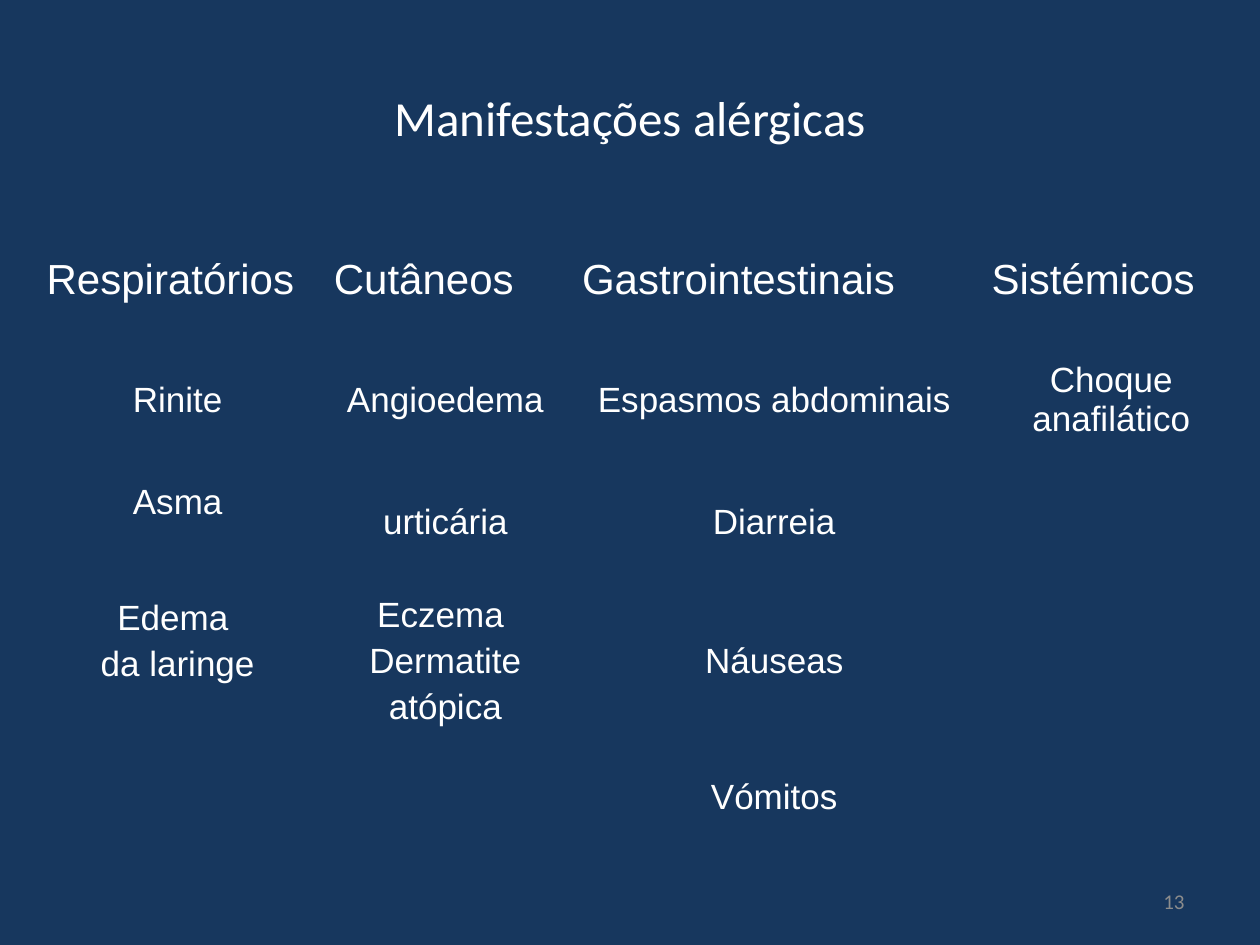
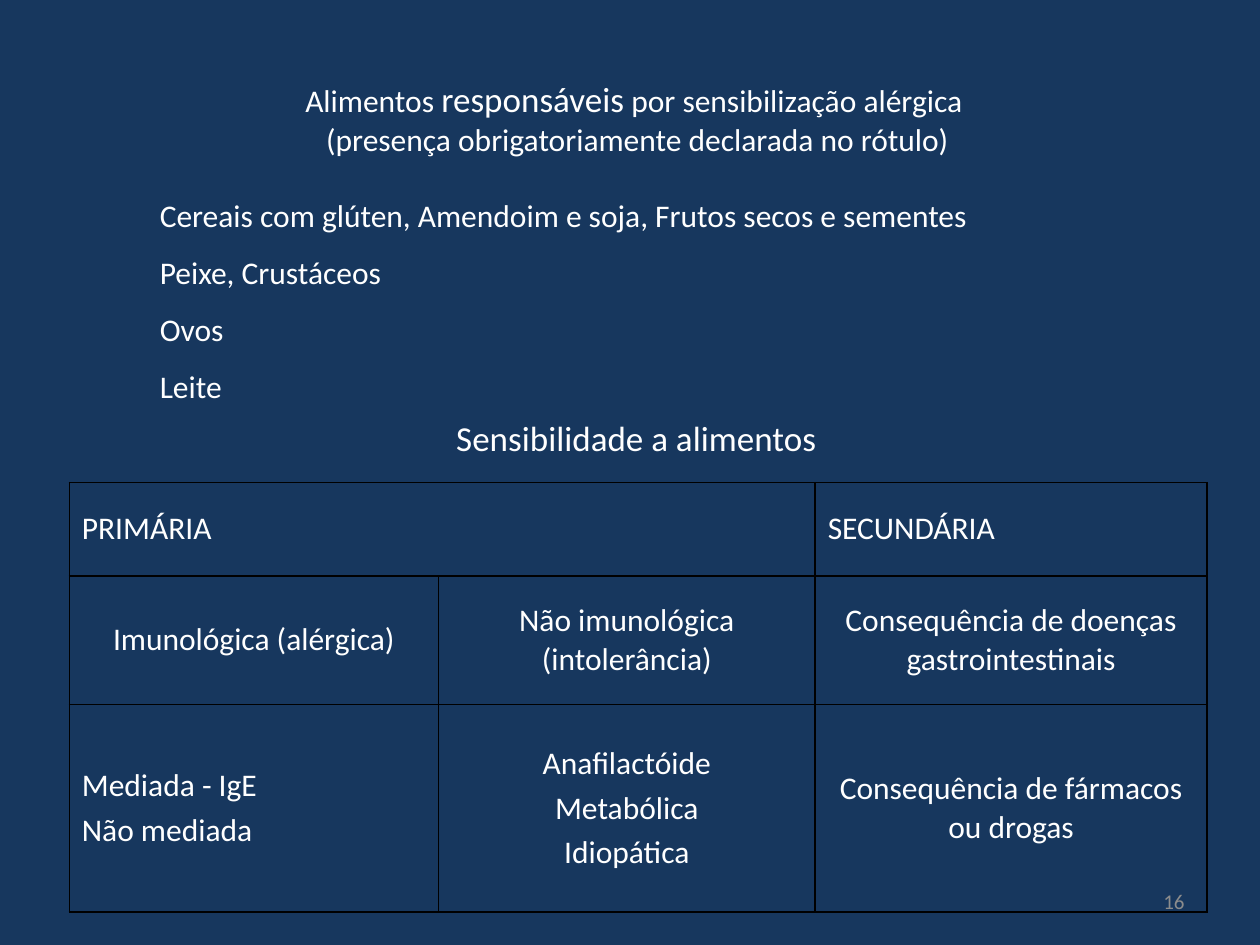
import pptx
import pptx.dml.color
import pptx.enum.text
import pptx.oxml.ns
import pptx.util
from lxml import etree

Inches, Pt = pptx.util.Inches, pptx.util.Pt
ALIGN = pptx.enum.text.PP_ALIGN
MIDDLE = pptx.enum.text.MSO_ANCHOR.MIDDLE
TOP = pptx.enum.text.MSO_ANCHOR.TOP

NAVY = pptx.dml.color.RGBColor(0x17, 0x37, 0x5E)
WHITE = pptx.dml.color.RGBColor(0xFF, 0xFF, 0xFF)
GREY = pptx.dml.color.RGBColor(0x8C, 0x8C, 0x8C)
BLACK = pptx.dml.color.RGBColor(0, 0, 0)
PLAIN_TABLE_STYLE = "{2D5ABB26-0587-4C30-8999-92F81FD0307C}"

# Each cell is a list of paragraphs.
MANIFESTATIONS = [
    [["Respiratórios"], ["Cutâneos"], ["Gastrointestinais"], ["Sistémicos"]],
    [["Rinite"], ["Angioedema"], ["Espasmos abdominais"], ["Choque anafilático"]],
    [["Asma"], ["urticária"], ["Diarreia"], []],
    [["Edema ", "da laringe"], ["Eczema ", "Dermatite", "atópica"], ["Náuseas"], []],
    [[], [], ["Vómitos"], []],
]
RAISED_CELLS = [(2, 0), (3, 0)]

SENSITIVITY = [
    [["PRIMÁRIA"], [], ["SECUNDÁRIA"]],
    [["Imunológica (alérgica)"], ["Não imunológica (intolerância)"],
     ["Consequência de doenças gastrointestinais"]],
    [["Mediada - IgE", "Não mediada"], ["Anafilactóide", "Metabólica", "Idiopática"],
     ["Consequência de fármacos ou drogas"]],
]

# Each paragraph is a list of (text, size) runs.
FOODS_HEADING = [
    [("Alimentos ", 18), ("responsáveis", 20), (" por sensibilização alérgica ", 18)],
    [("(presença obrigatoriamente declarada no rótulo)", 18)],
]
FOODS = [
    "Cereais com glúten, Amendoim e soja, Frutos secos e sementes",
    "Peixe, Crustáceos",
    "Ovos",
    "Leite",
]


def write(frame, paragraphs, align, font="Calibri", color=WHITE, before=None, spacing=None):
    """Fill a text frame from lists of (text, size) runs."""
    for index, runs in enumerate(paragraphs):
        paragraph = frame.add_paragraph() if index else frame.paragraphs[0]
        paragraph.alignment = align
        if before is not None:
            paragraph.space_before = Pt(before)
        if spacing:
            paragraph.line_spacing = spacing
        for text, size in runs:
            run = paragraph.add_run()
            run.text = text
            run.font.size, run.font.name = Pt(size), font
            run.font.color.rgb = color


def add_text(slide, box, paragraphs, align, anchor=MIDDLE, **style):
    frame = slide.shapes.add_textbox(*map(Inches, box)).text_frame
    frame.word_wrap = True
    frame.vertical_anchor = anchor
    write(frame, paragraphs, align, **style)


def add_slide(presentation, title, size, box, number):
    """Add a slide with its page number and its title in the given box."""
    slide = presentation.slides.add_slide(presentation.slide_layouts[5])
    add_text(slide, (7.17, 6.95, 2.33, 0.4), [[(str(number), 12)]], ALIGN.RIGHT, color=GREY)
    shape = slide.shapes.title
    shape.left, shape.top, shape.width, shape.height = map(Inches, box)
    shape.text_frame.vertical_anchor = MIDDLE
    write(shape.text_frame, [[(title, size)]], ALIGN.CENTER)
    return slide


def add_borders(cell):
    properties = cell._tc.get_or_add_tcPr()
    for side in ("a:lnL", "a:lnR", "a:lnT", "a:lnB"):
        line = etree.SubElement(properties, pptx.oxml.ns.qn(side), w=str(Pt(1)))
        fill = etree.SubElement(line, pptx.oxml.ns.qn("a:solidFill"))
        etree.SubElement(fill, pptx.oxml.ns.qn("a:srgbClr"), val=str(BLACK))


def add_table(slide, left, top, columns, heights, rows, font, header_size, body_size,
              left_cells=(), bordered=False):
    """Add an unfilled table; the header row and left_cells are left-aligned."""
    table = slide.shapes.add_table(
        len(rows), len(columns), Inches(left), Inches(top),
        Inches(sum(columns)), Inches(sum(heights))).table
    table.first_row = table.horz_banding = False
    table._tbl.tblPr.find(pptx.oxml.ns.qn("a:tableStyleId")).text = PLAIN_TABLE_STYLE
    for column, width in zip(table.columns, columns):
        column.width = Inches(width)
    for r, (height, row) in enumerate(zip(heights, rows)):
        table.rows[r].height = Inches(height)
        size = body_size if r else header_size
        for c, texts in enumerate(row):
            cell = table.cell(r, c)
            if bordered:
                add_borders(cell)
            cell.fill.background()
            cell.vertical_anchor = MIDDLE
            align = ALIGN.LEFT if r == 0 or (r, c) in left_cells else ALIGN.CENTER
            write(cell.text_frame, [[(text, size)] for text in texts], align, font,
                  before=0.2 * size)
    return table


def add_manifestations(presentation):
    slide = add_slide(presentation, "Manifestações alérgicas", 28, (0.5, 0.3, 9, 1.25), 13)
    table = add_table(slide, 0.27, 1.75, [2.28, 1.97, 3.25, 2.1],
                      [0.95, 0.95, 0.99, 0.99, 0.95], MANIFESTATIONS, "Arial", 24, 20)
    for position in RAISED_CELLS:
        table.cell(*position).margin_bottom = Inches(0.36)


def add_foods(presentation):
    slide = add_slide(presentation, "Sensibilidade a alimentos", 20, (0.55, 3.05, 9, 0.85), 16)
    table = add_table(slide, 0.55, 3.83, [2.93, 2.99, 3.11], [0.74, 1.02, 1.65],
                      SENSITIVITY, "Calibri", 18, 18, left_cells=[(2, 0)], bordered=True)
    table.cell(0, 0).merge(table.cell(0, 1))
    add_text(slide, (0.31, 0.31, 9.5, 1.25), FOODS_HEADING, ALIGN.CENTER)
    add_text(slide, (1.17, 1.36, 7.34, 1.92), [[(food, 18)] for food in FOODS],
             ALIGN.LEFT, TOP, spacing=1.5)


def main():
    presentation = pptx.Presentation()
    presentation.slide_width, presentation.slide_height = Inches(10), Inches(7.5)
    background = presentation.slide_master.background.fill
    background.solid()
    background.fore_color.rgb = NAVY
    add_manifestations(presentation)
    add_foods(presentation)
    presentation.save("out.pptx")


if __name__ == "__main__":
    main()
